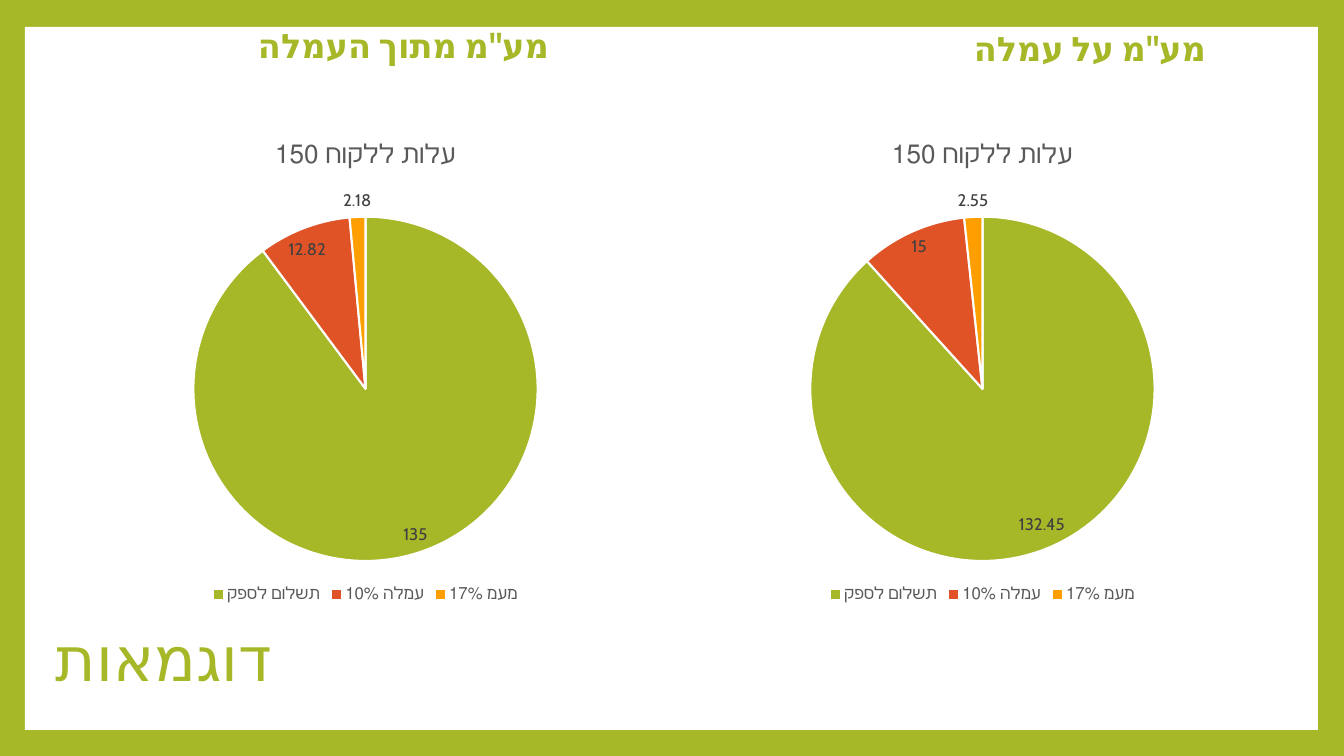
import pptx
import pptx.util
import pptx.chart.data
import pptx.dml.color
import pptx.enum.chart
import pptx.enum.shapes
import pptx.enum.text
import lxml.etree

PX = 914400 / 100.8
FONT = "Cabin"
GREEN, RED, GOLD = "A6B727", "DF5327", "FE9E00"
WHITE, GREY, DARK = "FFFFFF", "595959", "404040"


def color(code):
    return pptx.dml.color.RGBColor.from_string(code)


def style(font, size, code, bold=False):
    font.name, font.size, font.bold = FONT, pptx.util.Pt(size), bold
    font.color.rgb = color(code)


deck = pptx.Presentation()
deck.slide_width, deck.slide_height = round(1344 * PX), round(756 * PX)
slide = deck.slides.add_slide(deck.slide_layouts[6])

# Green frame around a white panel
slide.background.fill.solid()
slide.background.fill.fore_color.rgb = color(GREEN)
box = [round(n * PX) for n in (25, 27, 1293, 703)]
panel = slide.shapes.add_shape(pptx.enum.shapes.MSO_SHAPE.RECTANGLE, *box)
panel.shadow.inherit = False
panel.fill.solid()
panel.fill.fore_color.rgb = color(WHITE)
panel.line.fill.background()

# Slide title and the two headings, all right-to-left
left, right = pptx.enum.text.PP_ALIGN.LEFT, pptx.enum.text.PP_ALIGN.RIGHT
texts = [
    ("דוגמאות", (46, 579, 940, 166), 44, False, left),
    ("מע\"מ מתוך העמלה", (46, 16, 513, 64), 24, True, right),
    ("מע\"מ על עמלה", (702, 19, 514, 64), 24, True, right),
]
for words, place, size, bold, align in texts:
    box = [round(n * PX) for n in place]
    frame = slide.shapes.add_textbox(*box).text_frame
    frame.word_wrap = True
    frame.vertical_anchor = pptx.enum.text.MSO_ANCHOR.MIDDLE
    frame.text = words
    para = frame.paragraphs[0]
    para.alignment, para.line_spacing = align, 0.9
    para._p.get_or_add_pPr().set("rtl", "1")
    run = para.runs[0]
    style(run.font, size, GREEN, bold)
    props = run._r.get_or_add_rPr()
    props.set("lang", "he-IL")
    script = lxml.etree.SubElement(props, pptx.oxml.ns.qn("a:cs"))
    script.set("typeface", FONT)

# Pie charts: place, values, and a label that replaces the first value
name = "עלות ללקוח 150"
pies = [
    ((59, 120, 613, 487), (132.45, 12.82, 2.18), "135"),
    ((702, 120, 561, 487), (132.45, 15, 2.55), None),
]
best = pptx.enum.chart.XL_LABEL_POSITION.BEST_FIT
for place, values, label in pies:
    data = pptx.chart.data.CategoryChartData()
    data.categories = ["תשלום לספק", "עמלה 10%", "מעמ 17%"]
    data.add_series(name, values)
    box = [round(n * PX) for n in place]
    kind = pptx.enum.chart.XL_CHART_TYPE.PIE
    chart = slide.shapes.add_chart(kind, *box, data).chart
    style(chart.font, 10, "000000")

    # Title and legend
    chart.has_title = True
    head = chart.chart_title.text_frame
    head.text = name
    style(head.paragraphs[0].runs[0].font, 18.6, GREY)
    chart.has_legend = True
    chart.legend.position = pptx.enum.chart.XL_LEGEND_POSITION.BOTTOM
    chart.legend.include_in_layout = False
    style(chart.legend.font, 12, GREY)

    # Slices
    plot = chart.plots[0]
    plot.vary_by_categories = True
    series = plot.series[0]
    for i, code in enumerate((GREEN, RED, GOLD)):
        part = series.points[i].format
        part.fill.solid()
        part.fill.fore_color.rgb = color(code)
        part.line.color.rgb = color(WHITE)
        part.line.width = pptx.util.Pt(1.5)

    # Value labels
    labels = series.data_labels
    labels.show_value = True
    labels.position = best
    style(labels.font, 12, DARK)
    if label:
        first = series.points[0].data_label
        first.text_frame.text = label
        style(first.text_frame.paragraphs[0].runs[0].font, 12, DARK)
        first.position = best

deck.save("out.pptx")
